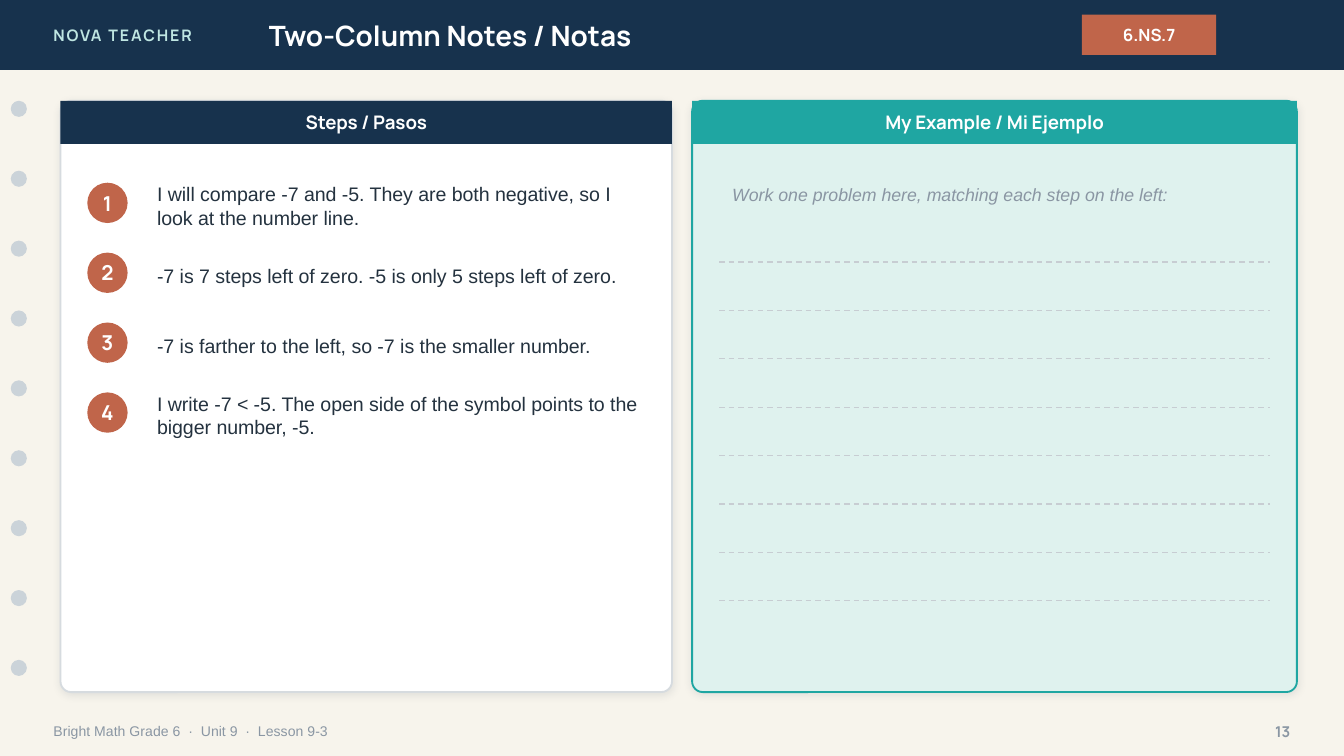
from lxml.etree import SubElement
from pptx import Presentation
from pptx.dml.color import RGBColor
from pptx.enum.dml import MSO_LINE_DASH_STYLE as Dash
from pptx.enum.shapes import MSO_CONNECTOR as Connector, MSO_SHAPE as Shape
from pptx.enum.text import MSO_ANCHOR as Anchor, MSO_AUTO_SIZE as AutoSize, PP_ALIGN as Align
from pptx.oxml.ns import qn
from pptx.util import Pt

NAVY, TEAL, CLAY = "17324D", "1FA6A2", "C0654A"
CREAM, MINT, WHITE = "F7F4EC", "DFF2EE", "FFFFFF"
INK, GRAY = "24323F", "8A96A3"
ROW_GAP = 37.44
CARD_TOP, CARD_HEIGHT = 54, 316.8
STEPS = [
    "I will compare -7 and -5. They are both negative, so I look at the number line.",
    "-7 is 7 steps left of zero. -5 is only 5 steps left of zero.",
    "-7 is farther to the left, so -7 is the smaller number.",
    "I write -7 < -5. The open side of the symbol points to the bigger number, -5.",
]


def color(value):
    return RGBColor.from_string(value)


def write(shape, text, size, ink, font="Manrope", align=Align.LEFT, italic=False, spacing=None):
    frame = shape.text_frame
    frame.word_wrap = True
    frame.auto_size = AutoSize.NONE
    frame.vertical_anchor = Anchor.MIDDLE
    para = frame.paragraphs[0]
    para.alignment = align
    span = para.add_run()
    span.text = text
    para.font.name = font
    para.font.size = Pt(size)
    para.font.bold = font == "Manrope"
    para.font.italic = italic
    para.font.color.rgb = color(ink)
    if spacing:
        span._r.get_or_add_rPr().set("spc", str(spacing * 100))


def add_text(page, left, top, width, height, text, size, ink, **style):
    box = page.shapes.add_textbox(Pt(left), Pt(top), Pt(width), Pt(height))
    write(box, text, size, ink, **style)


def add_block(page, kind, left, top, width, height, fill, outline=None):
    block = page.shapes.add_shape(kind, Pt(left), Pt(top), Pt(width), Pt(height))
    block.shadow.inherit = False
    block.fill.solid()
    block.fill.fore_color.rgb = color(fill)
    if outline:
        block.line.color.rgb = color(outline)
        block.line.width = Pt(1)
    else:
        block.line.fill.background()
    return block


def add_soft_shadow(block):
    effects = block._element.spPr.find(qn("a:effectLst"))
    shadow = SubElement(effects, qn("a:outerShdw"), blurRad=str(Pt(4)), dist=str(Pt(1)),
                        dir="5400000", algn="bl", rotWithShape="0")
    tint = SubElement(shadow, qn("a:srgbClr"), val="1C2E42")
    SubElement(tint, qn("a:alpha"), val="10000")


def add_card(page, left, width, heading, header_fill, body_fill, outline):
    card = add_block(page, Shape.ROUNDED_RECTANGLE, left, CARD_TOP, width, CARD_HEIGHT,
                     body_fill, outline)
    card.adjustments[0] = 0.018
    add_soft_shadow(card)
    header = add_block(page, Shape.RECTANGLE, left, CARD_TOP, width, 23.04, header_fill)
    write(header, heading, 10, WHITE, align=Align.CENTER)


def add_step(page, number, text):
    top = 97.92 + (number - 1) * ROW_GAP
    badge = add_block(page, Shape.OVAL, 46.8, top, 21.6, 21.6, CLAY)
    frame = badge.text_frame
    frame.margin_left = frame.margin_right = frame.margin_top = frame.margin_bottom = 0
    write(badge, str(number), 11, WHITE, align=Align.CENTER)
    add_text(page, 77.04, top - 4.32, 272.16, 33.12, text, 10.5, INK, font="Arial")


def add_writing_line(page, top):
    rule = page.shapes.add_connector(Connector.STRAIGHT, Pt(385.2), Pt(top), Pt(680.4), Pt(top))
    rule.line.color.rgb = color("C7CDD2")
    rule.line.width = Pt(0.75)
    rule.line.dash_style = Dash.DASH
    SubElement(rule._element.spPr, qn("a:effectLst"))


def add_title(page, text):
    title = page.shapes.title
    title.left, title.top, title.width, title.height = Pt(136.8), Pt(0), Pt(403.2), Pt(37.44)
    write(title, text, 15, WHITE)
    title.element.getparent().append(title.element)


def add_header(page):
    add_block(page, Shape.RECTANGLE, 0, 0, 720, 37.44, NAVY)
    add_text(page, 21.6, 0, 172.8, 37.44, "NOVA TEACHER", 8.5, "BFE6E2", spacing=1)
    add_title(page, "Two-Column Notes / Notas")
    standard = add_block(page, Shape.RECTANGLE, 579.6, 7.92, 72, 21.6, CLAY)
    write(standard, "6.NS.7", 9, WHITE, align=Align.CENTER)


def add_footer(page):
    add_text(page, 21.6, 381.6, 504, 20.16, "Bright Math Grade 6  ·  Unit 9  ·  Lesson 9-3",
             7.5, GRAY, font="Arial")
    add_text(page, 662.4, 381.6, 36, 20.16, "13", 8, GRAY, align=Align.RIGHT)


def main():
    deck = Presentation()
    deck.slide_width, deck.slide_height = Pt(720), Pt(405)
    page = deck.slides.add_slide(deck.slide_layouts[5])
    page.background.fill.solid()
    page.background.fill.fore_color.rgb = color(CREAM)

    add_header(page)
    for hole in range(9):
        add_block(page, Shape.OVAL, 5.76, CARD_TOP + hole * ROW_GAP, 8.64, 8.64, "CBD3D9")
    add_footer(page)

    add_card(page, 32.4, 327.6, "Steps / Pasos", NAVY, WHITE, "D6DBDF")
    for number, text in enumerate(STEPS, 1):
        add_step(page, number, text)

    add_card(page, 370.8, 324, "My Example / Mi Ejemplo", TEAL, MINT, TEAL)
    add_text(page, 385.2, 90, 295.2, 28.8, "Work one problem here, matching each step on the left:",
             9.5, GRAY, font="Arial", italic=True)
    for row in range(8):
        add_writing_line(page, 140.4 + row * 25.92)

    deck.save("out.pptx")


if __name__ == "__main__":
    main()
